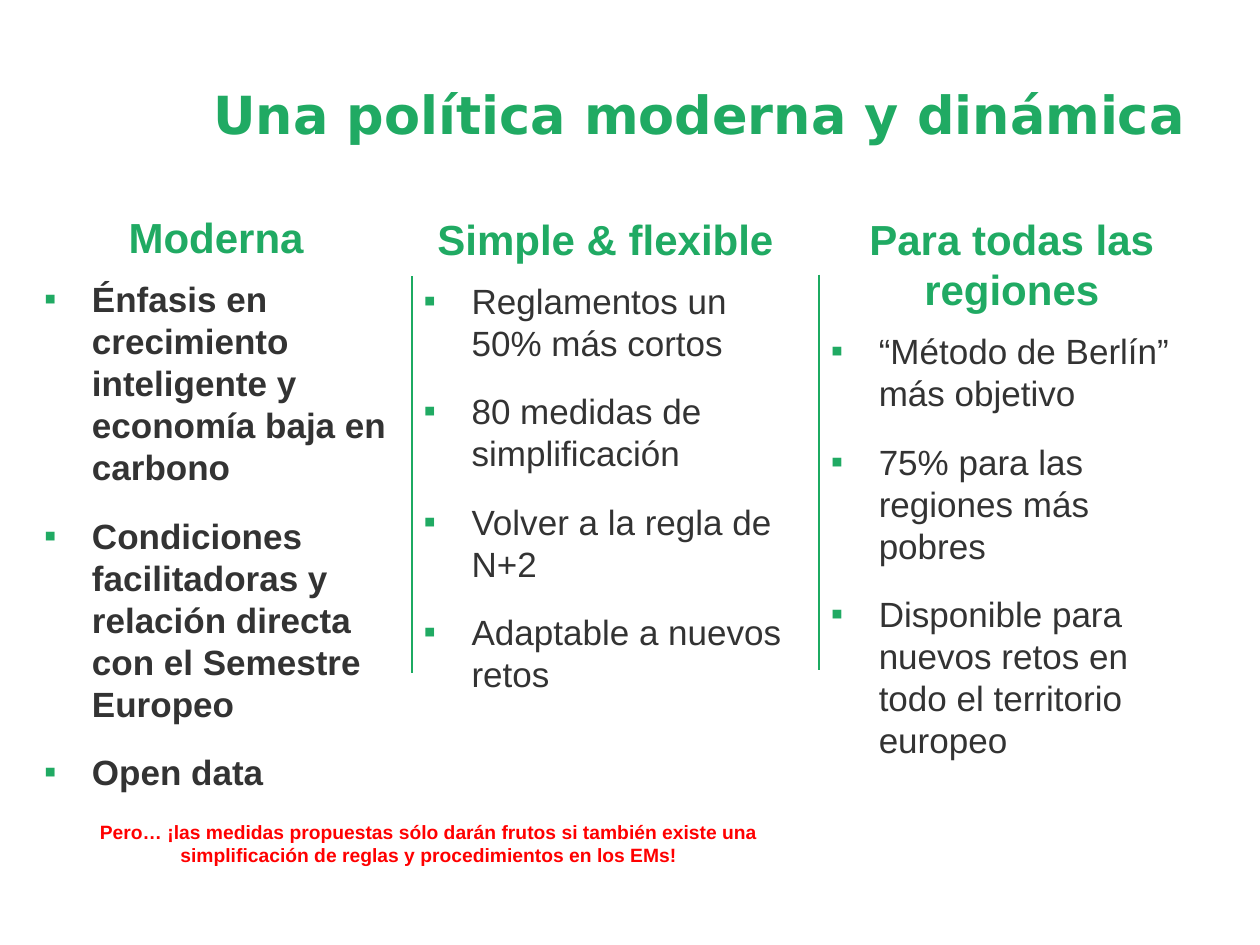
from pptx import Presentation
from pptx.dml.color import RGBColor
from pptx.enum import shapes, text
from pptx.oxml import ns, xmlchemy
from pptx.util import Pt

GREEN = RGBColor(0x20, 0xAA, 0x63)
LINE_GREEN = RGBColor(0x1C, 0xAA, 0x61)
GREY = RGBColor(0x33, 0x33, 0x33)
RED = RGBColor(0xFF, 0x00, 0x00)
HANGING = 27.4

# Each column: box (left, top, width, height), text margin, bold, heading, items
COLUMNS = [
    ((11.5, 117.4, 224, 351), 34, True, "Moderna", [
        "Énfasis en crecimiento inteligente y economía baja en carbono",
        "Condiciones facilitadoras y relación directa con el Semestre Europeo",
        "Open data"]),
    ((235, 118.4, 222, 309), HANGING, False, "Simple & flexible", [
        "Reglamentos un 50% más cortos",
        "80 medidas de simplificación",
        "Volver a la regla de N+2",
        "Adaptable a nuevos retos"]),
    ((467.7, 118.4, 221, 329), HANGING, False, "Para todas las regiones", [
        "“Método de Berlín” más objetivo",
        "75% para las regiones más pobres",
        "Disponible para nuevos retos en todo el territorio europeo"]),
]
# Each divider: left, top, bottom
DIVIDERS = [(235.5, 158, 384.5), (468, 157, 383)]


def add_frame(slide, box, anchor=text.MSO_ANCHOR.TOP):
    frame = slide.shapes.add_textbox(*map(Pt, box)).text_frame
    frame.word_wrap = True
    frame.vertical_anchor = anchor
    return frame


def style(paragraph, words, size, color, bold, name="Arial"):
    paragraph.text = words
    font = paragraph.font
    font.name, font.size, font.bold = name, Pt(size), bold
    font.color.rgb = color


def add_bullet(paragraph, margin):
    properties = paragraph._p.get_or_add_pPr()
    properties.set("marL", str(Pt(margin)))
    properties.set("indent", str(-Pt(HANGING)))
    color = xmlchemy.OxmlElement("a:buClr")
    xml_color = xmlchemy.OxmlElement("a:srgbClr")
    xml_color.set("val", str(GREEN))
    color.append(xml_color)
    bullet_font = xmlchemy.OxmlElement("a:buFont")
    bullet_font.set("typeface", "Arial")
    character = xmlchemy.OxmlElement("a:buChar")
    character.set("char", "▪")
    properties.extend([color, bullet_font, character])


def add_centred(slide, box, words, size, color, name="Arial",
                anchor=text.MSO_ANCHOR.TOP):
    paragraph = add_frame(slide, box, anchor).paragraphs[0]
    paragraph.alignment = text.PP_ALIGN.CENTER
    style(paragraph, words, size, color, True, name)


def add_column(slide, box, margin, bold, heading, items):
    frame = add_frame(slide, box)
    # Heading
    paragraph = frame.paragraphs[0]
    paragraph.alignment = text.PP_ALIGN.CENTER
    paragraph.space_after = Pt(6)
    style(paragraph, heading, 24, GREEN, True)
    # Bulleted points
    for item in items:
        paragraph = frame.add_paragraph()
        paragraph.space_before = Pt(3)
        paragraph.space_after = Pt(12)
        add_bullet(paragraph, margin)
        style(paragraph, item, 20, GREY, bold)


def add_divider(slide, left, top, bottom):
    line = slide.shapes.add_connector(
        shapes.MSO_CONNECTOR.STRAIGHT, Pt(left), Pt(top), Pt(left), Pt(bottom))
    line.line.color.rgb = LINE_GREEN
    line.line.width = Pt(1)
    line._element.find(ns.qn("p:spPr")).append(
        xmlchemy.OxmlElement("a:effectLst"))


def main():
    presentation = Presentation()
    presentation.slide_width, presentation.slide_height = Pt(720), Pt(540)
    slide = presentation.slides.add_slide(presentation.slide_layouts[6])

    # Title
    add_centred(slide, (110.7, 30, 578, 70), "Una política moderna y dinámica",
                30, GREEN, "DejaVu Sans", text.MSO_ANCHOR.MIDDLE)
    # Three columns and the lines between them
    for column in COLUMNS:
        add_column(slide, *column)
    for divider in DIVIDERS:
        add_divider(slide, *divider)
    # Closing warning
    add_centred(
        slide, (33.4, 465, 423.5, 34),
        "Pero… ¡las medidas propuestas sólo darán frutos si también existe una "
        "simplificación de reglas y procedimientos en los EMs!", 11, RED)

    presentation.save("out.pptx")


if __name__ == "__main__":
    main()
